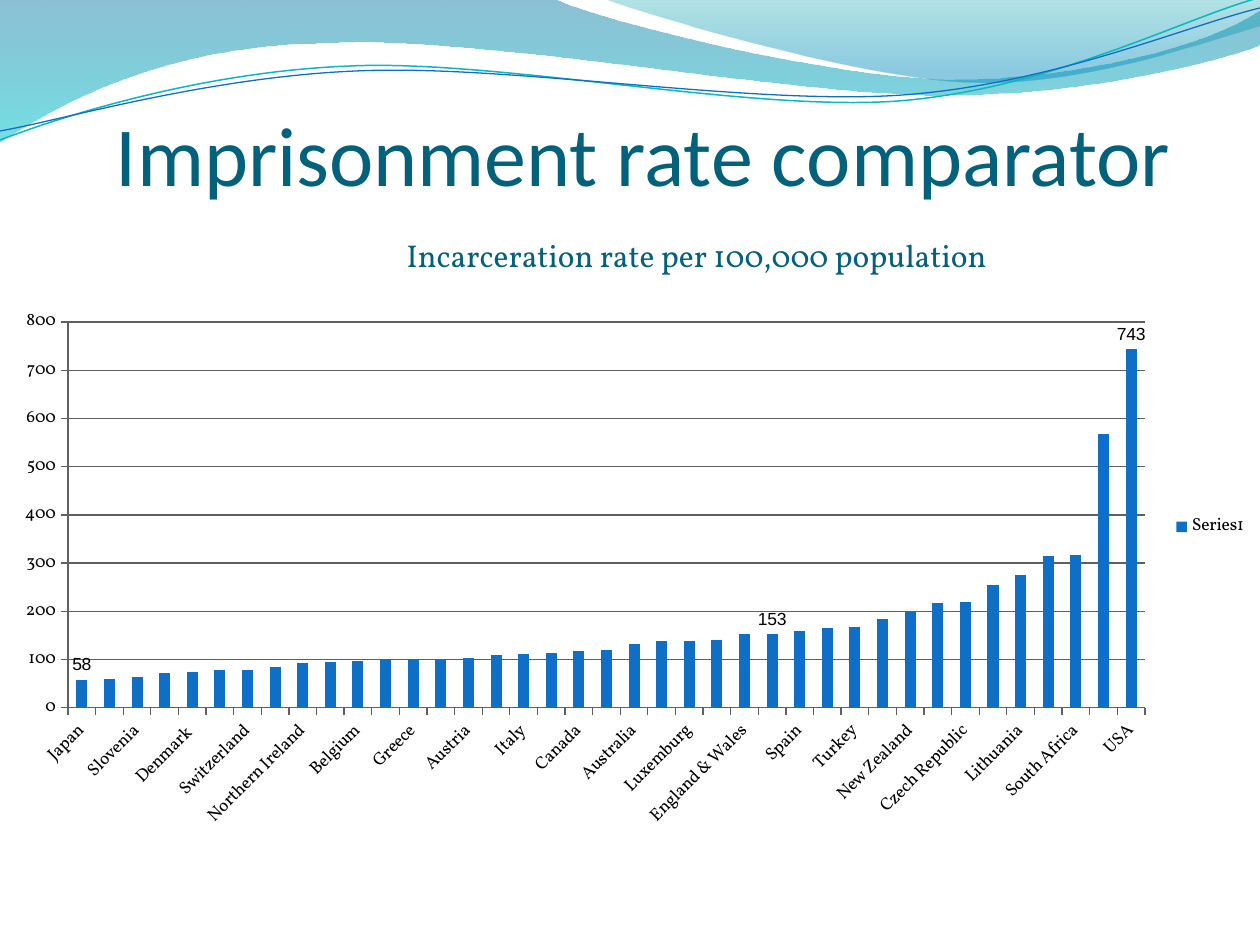
from lxml import etree
from pptx import Presentation
from pptx.chart.data import CategoryChartData
from pptx.dml.color import RGBColor
from pptx.enum.chart import XL_CHART_TYPE, XL_LABEL_POSITION, XL_LEGEND_POSITION, XL_TICK_MARK
from pptx.enum.text import MSO_ANCHOR, PP_ALIGN
from pptx.oxml.ns import qn
from pptx.util import Pt

PX = 914400 / 126
COLUMN = XL_CHART_TYPE.COLUMN_CLUSTERED
OUTSIDE_END = XL_LABEL_POSITION.OUTSIDE_END
RIGHT = XL_LEGEND_POSITION.RIGHT
TICK_OUT, NO_TICK = XL_TICK_MARK.OUTSIDE, XL_TICK_MARK.NONE
BOTTOM, LEFT = MSO_ANCHOR.BOTTOM, PP_ALIGN.LEFT

TEAL = RGBColor(0x04, 0x61, 0x7B)
BLUE = RGBColor(0x0F, 0x6F, 0xC6)
CYAN = RGBColor(0x0A, 0xB8, 0xBF)
BLACK = RGBColor(0, 0, 0)
GREY = RGBColor(0x60, 0x60, 0x60)
WAVE_TOP, WAVE_END = RGBColor(0x00, 0x74, 0xA1), RGBColor(0x00, 0xC6, 0xCF)
CREST_TOP, CREST_END = RGBColor(0x00, 0xA1, 0xA9), RGBColor(0x00, 0x8B, 0xBF)
CHART_W, CHART_H = 1260, 626

prs = Presentation()
prs.slide_width, prs.slide_height = round(1260 * PX), round(945 * PX)
s = prs.slides.add_slide(prs.slide_layouts[5])


def add_curve(start, steps, close):
    """Freeform in px: a step of 2 numbers is a line, of 6 a Bezier curve."""
    points = [(step[i], step[i + 1]) for step in steps for i in range(0, len(step), 2)]
    fb = s.shapes.build_freeform(start[0], start[1], scale=PX)
    fb.add_line_segments(points, close=close)
    sp = fb.convert_to_shape()
    sp.shadow.inherit = False
    # Gather the three points of each curve into one Bezier segment
    segments = iter(list(sp._element.spPr.iter(qn("a:lnTo"))))
    for step in steps:
        first = next(segments)
        if len(step) == 6:
            curve = etree.Element(qn("a:cubicBezTo"))
            first.addprevious(curve)
            for segment in (first, next(segments), next(segments)):
                curve.append(segment[0])
                segment.getparent().remove(segment)
    return sp


def set_layout(parent, index, **values):
    """Place a chart part by fractions of the chart's size."""
    for old in parent.findall(qn("c:layout")):
        parent.remove(old)
    layout = etree.Element(qn("c:layout"))
    manual = etree.SubElement(layout, qn("c:manualLayout"))
    for tag, val in values.items():
        etree.SubElement(manual, qn("c:" + tag)).set("val", str(val))
    parent.insert(index, layout)


# Filled waves: start, steps, then (colour, position, opacity %) per stop
waves = [
    ((0, 0), [(554, -1), (600, 21, 837, 79, 955, 79), (1075, 79, 1207, 47, 1260, 11),
              (1261, 45), (1239, 55, 1096, 96, 940, 95), (784, 95, 481, 35, 324, 43),
              (163, 45, 58, 105, -1, 142)],
     [(WAVE_TOP, 0, 45), (WAVE_END, 1, 55)]),
    ((604, -1), [(641, 14, 859, 78, 969, 82), (1079, 87, 1211, 40, 1260, 26), (1260, 0)],
     [(CREST_TOP, 0, 30), (CREST_END, 0.8, 45)]),
]
for start, steps, stops in waves:
    sp = add_curve(start, steps, True)
    sp.line.fill.background()
    sp.fill.gradient()
    sp.fill.gradient_angle = 270
    for stop, (color, position, _) in zip(sp.fill.gradient_stops, stops):
        stop.color.rgb = color
        stop.position = position
    for clr, (_, _, opacity) in zip(sp._element.spPr.iter(qn("a:srgbClr")), stops):
        etree.SubElement(clr, qn("a:alpha")).set("val", str(opacity * 1000))

# Thin wave lines
lines = [
    ((0, 140), [(60, 117, 199, 72, 349, 66), (498, 59, 747, 112, 898, 101),
                (1050, 89, 1182, 19, 1258, -2)], CYAN, 0.85),
    ((0, 131), [(59, 121, 207, 77, 357, 71), (508, 64, 752, 106, 903, 95),
                (1053, 84, 1186, 26, 1260, 8)], BLUE, 0.75),
]
for start, steps, color, width in lines:
    sp = add_curve(start, steps, False)
    sp.fill.background()
    sp.line.color.rgb = color
    sp.line.width = Pt(width)

# Chart
rates = [
    ("Japan", 58), ("Finland", 59), ("Slovenia", 64), ("Norway", 73), ("Denmark ", 74),
    ("Sweden", 78), ("Switzerland", 79), ("Germany", 85), ("Northern Ireland", 93),
    ("Netherlands", 94), ("Belgium", 97), ("Ireland (Eire)", 99), ("Greece", 101),
    ("France", 102), ("Austria", 104), ("Cyprus", 110), ("Italy", 111), ("Portugal", 114),
    ("Canada", 117), ("Bulgaria", 120), ("Australia", 133), ("Romania", 138),
    ("Luxemburg", 139), ("Malta", 140), ("England & Wales", 152), ("Scotland", 153),
    ("Spain", 159), ("Hungry ", 165), ("Turkey", 168), ("Slovakia", 184),
    ("New Zealand", 199), ("Poland", 218), ("Czech Republic", 220), ("Estonia", 254),
    ("Lithuania", 276), ("Latvia", 314), ("South Africa", 316),
    ("Russian Federation", 568), ("USA", 743),
]
data = CategoryChartData()
data.categories = [country for country, _ in rates]
data.add_series("Series1", [rate for _, rate in rates])
frame = s.shapes.add_chart(COLUMN, 0, round(214 * PX), round(CHART_W * PX),
                           round(CHART_H * PX), data)
chart = frame.chart
chart.font.name = "Vollkorn"
chart.font.size = Pt(10)
chart.font.color.rgb = BLACK

# Chart title and legend
chart.has_title = True
tf = chart.chart_title.text_frame
tf.text = "Incarceration rate per 100,000 population "
font = tf.paragraphs[0].runs[0].font
font.name, font.size, font.bold = "Vollkorn", Pt(18), False
font.color.rgb = TEAL
set_layout(chart.chart_title._element, 1, xMode="edge", yMode="edge",
           x=401 / CHART_W, y=14 / CHART_H)
chart.has_legend = True
chart.legend.position = RIGHT
chart.legend.include_in_layout = False

# Axes and plot area
cat, val = chart.category_axis, chart.value_axis
for axis in (cat, val):
    axis.major_tick_mark = TICK_OUT
    axis.minor_tick_mark = NO_TICK
    axis.format.line.color.rgb = GREY
    axis.tick_labels.font.size = Pt(10)
cat._element.find(qn("c:txPr")).find(qn("a:bodyPr")).set("rot", "-2700000")
val.minimum_scale, val.maximum_scale, val.major_unit = 0, 800, 100
val.has_major_gridlines = True
val.major_gridlines.format.line.color.rgb = GREY
set_layout(chart._chartSpace.chart.plotArea, 0, layoutTarget="inner", xMode="edge",
           yMode="edge", x=68 / CHART_W, y=108 / CHART_H, w=1077 / CHART_W, h=386 / CHART_H)

# Columns, with values on three countries
plot = chart.plots[0]
plot.vary_by_categories = False
plot.gap_width = 150
series = plot.series[0]
series.format.fill.solid()
series.format.fill.fore_color.rgb = BLUE
series.data_labels.show_value = False
for i, (country, _) in enumerate(rates):
    if country in ("Japan", "Scotland", "USA"):
        label = series.points[i].data_label
        label.font.name, label.font.size = "Arial", Pt(10)
        label.position = OUTSIDE_END

# Title, in front of the waves
title = s.shapes.title
s.shapes._spTree.append(title._element)
title.left, title.top = round(116 * PX), round(45 * PX)
title.width, title.height = round(1144 * PX), round(158 * PX)
tf = title.text_frame
tf.text = "Imprisonment rate comparator"
tf.vertical_anchor = BOTTOM
tf.margin_left = tf.margin_right = tf.margin_bottom = 0
tf.margin_top = round(6 * PX)
p = tf.paragraphs[0]
p.alignment = LEFT
font = p.runs[0].font
font.name, font.size = "Calibri", Pt(48)
font.color.rgb = TEAL

prs.save("out.pptx")
